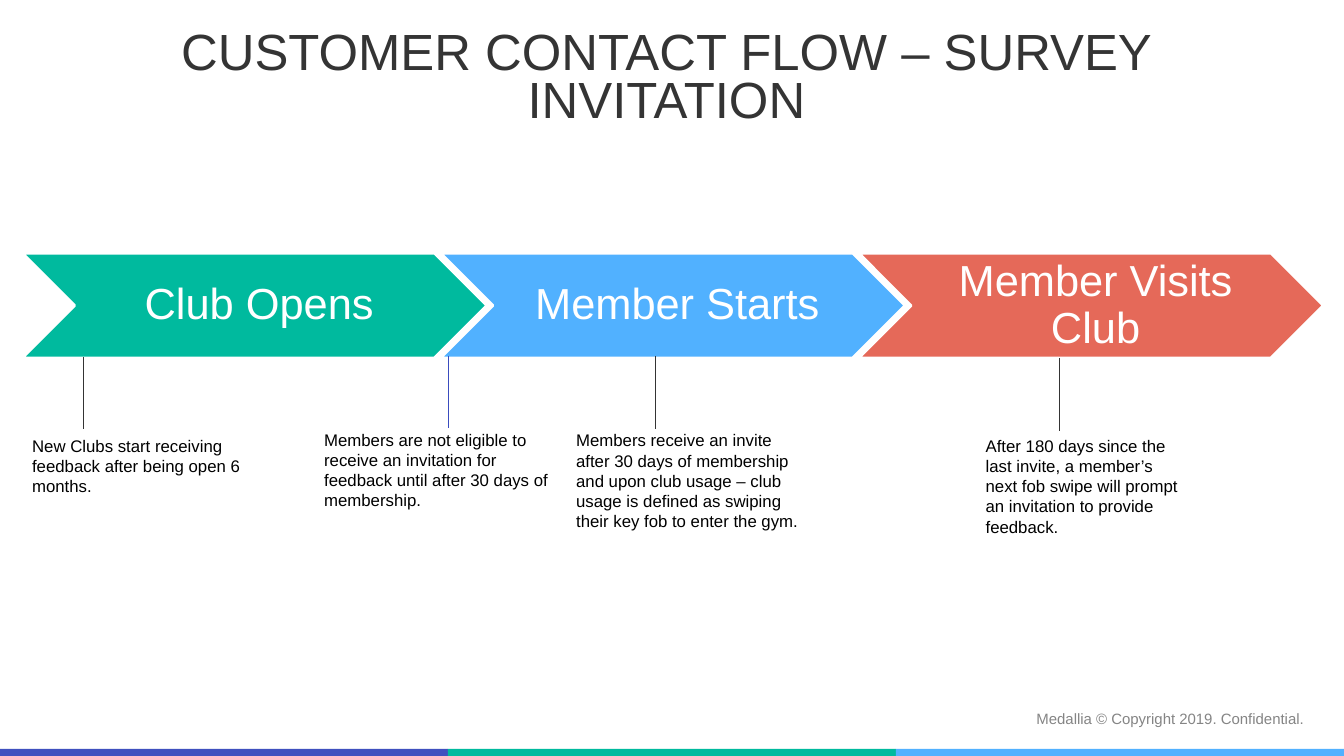
from pptx import Presentation
from pptx.dml.color import RGBColor
from pptx.enum.shapes import MSO_CONNECTOR as Connector, MSO_SHAPE as Shape
from pptx.enum.text import MSO_ANCHOR as Anchor, MSO_AUTO_SIZE as AutoSize, PP_ALIGN as Align
from pptx.oxml.ns import qn
from pptx.util import Cm, Pt

TEAL = RGBColor(0x00, 0xBA, 0x9E)
SKY = RGBColor(0x51, 0xB1, 0xFF)
CORAL = RGBColor(0xE5, 0x69, 0x59)
INDIGO = RGBColor(0x3F, 0x50, 0xBF)
LINE_BLUE = RGBColor(0x3A, 0x4C, 0xBE)
CHARCOAL = RGBColor(0x34, 0x34, 0x34)
GREY = RGBColor(0x85, 0x85, 0x85)
BLACK = RGBColor(0x00, 0x00, 0x00)
WHITE = RGBColor(0xFF, 0xFF, 0xFF)

# Content; lengths are centimetres
TITLE = "CUSTOMER CONTACT FLOW – SURVEY INVITATION"
FOOTER = "Medallia © Copyright 2019. Confidential."
STAGES = [("Club Opens", TEAL), ("Member Starts", SKY), ("Member Visits Club", CORAL)]
BAR_COLOURS = [INDIGO, TEAL, SKY]
NOTES = [  # text, left, top, width, height
    ("New Clubs start receiving feedback after being open 6 months.",
     0.56, 10.85, 6.3, 1.8),
    ("Members are not eligible to receive an invitation for feedback until "
     "after 30 days of membership.", 7.92, 10.69, 6.3, 2.31),
    ("Members receive an invite after 30 days of membership and upon club usage "
     "– club usage is defined as swiping their key fob to enter the gym.",
     14.27, 10.71, 6.3, 2.82),
    ("After 180 days since the last invite, a member’s next fob swipe will prompt "
     "an invitation to provide feedback.", 24.59, 10.85, 5.49, 2.82),
]
LEADERS = [  # x, top, colour
    (2.11, 8.99, CHARCOAL),
    (11.3, 8.96, LINE_BLUE),
    (16.51, 8.97, CHARCOAL),
    (26.7, 9.02, CHARCOAL),
]

# Layout
CHEVRON_LEFT, CHEVRON_TOP, CHEVRON_PITCH = 0.56, 6.38, 10.54
CHEVRON_WIDTH, CHEVRON_HEIGHT = 11.71, 2.64
LEADER_LENGTH = 1.83
BAR_TOP, BAR_HEIGHT, BAR_WIDTH = 18.87, 0.18, 11.29

deck = Presentation()
deck.slide_width, deck.slide_height = Cm(33.87), Cm(19.05)
page = deck.slides.add_slide(deck.slide_layouts[5])


def write(box, text, size=12, colour=BLACK, align=Align.LEFT, anchor=Anchor.TOP,
          spacing=None, margins=(0.25, 0.13, 0.25, 0.13)):
    frame = box.text_frame
    frame.word_wrap = True
    frame.auto_size = AutoSize.NONE
    frame.vertical_anchor = anchor
    (frame.margin_left, frame.margin_top,
     frame.margin_right, frame.margin_bottom) = map(Cm, margins)
    para = frame.paragraphs[0]
    para.alignment = align
    para.line_spacing = spacing
    span = para.add_run()
    span.text = text
    span.font.name = "Arial"
    span.font.size = Pt(size)
    span.font.color.rgb = colour


def add_filled(kind, left, top, width, height, colour):
    shape = page.shapes.add_shape(kind, Cm(left), Cm(top), Cm(width), Cm(height))
    shape.shadow.inherit = False
    shape.fill.solid()
    shape.fill.fore_color.rgb = colour
    shape.line.fill.background()
    return shape


def add_text(text, left, top, width, height, **style):
    box = page.shapes.add_textbox(Cm(left), Cm(top), Cm(width), Cm(height))
    write(box, text, **style)


# Title
title = page.shapes.title
title.left, title.top, title.width, title.height = Cm(1.42), Cm(0.84), Cm(30.76), Cm(2.34)
write(title, TITLE, size=36.3, colour=CHARCOAL, align=Align.CENTER,
      anchor=Anchor.MIDDLE, spacing=0.8)

# Footer and colour bars
add_text(FOOTER, 25.7, 17.7, 7.59, 0.79, size=10.7, colour=GREY,
         align=Align.CENTER, margins=(0.33, 0.18, 0.33, 0.18))
for index, colour in enumerate(BAR_COLOURS):
    add_filled(Shape.RECTANGLE, index * BAR_WIDTH, BAR_TOP, BAR_WIDTH, BAR_HEIGHT, colour)

# Chevron process
for index, (label, colour) in enumerate(STAGES):
    chevron = add_filled(Shape.CHEVRON, CHEVRON_LEFT + index * CHEVRON_PITCH, CHEVRON_TOP,
                         CHEVRON_WIDTH, CHEVRON_HEIGHT, colour)
    chevron.line.color.rgb = WHITE
    chevron.line.width = Pt(2)
    write(chevron, label, size=31, colour=WHITE, align=Align.CENTER,
          anchor=Anchor.MIDDLE, spacing=0.9, margins=(0.36, 0.13, 0.13, 0.13))

# Leader lines
for x, top, colour in LEADERS:
    leader = page.shapes.add_connector(Connector.STRAIGHT, Cm(x), Cm(top),
                                       Cm(x), Cm(top + LEADER_LENGTH))
    leader.line.color.rgb = colour
    leader.line.width = Pt(0.75)
    properties = leader.element.spPr
    properties.append(properties.makeelement(qn("a:effectLst"), {}))

# Notes under the chevrons
for note in NOTES:
    add_text(*note)

deck.save("out.pptx")
